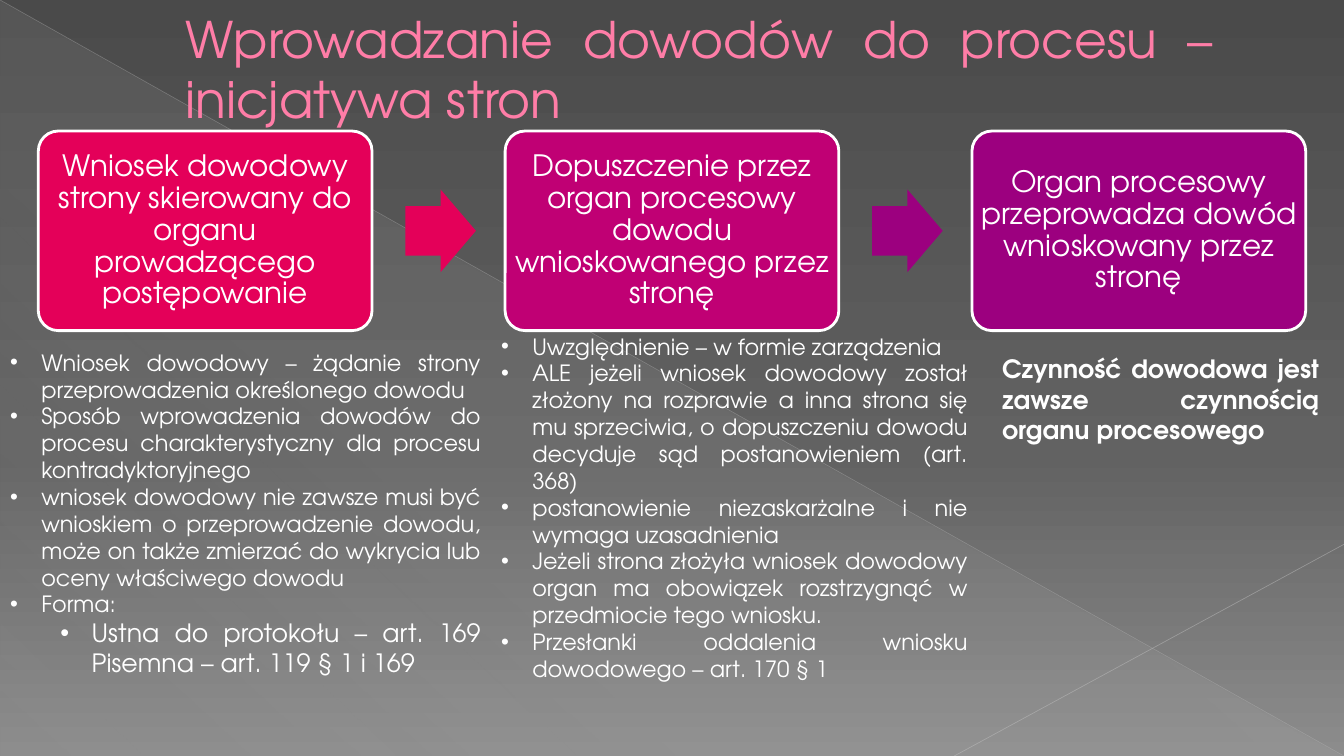
import dataclasses

import lxml.etree
import pptx
import pptx.dml.color
import pptx.enum.shapes
import pptx.enum.text
import pptx.oxml.ns
import pptx.util

Inches = pptx.util.Inches
Shape = pptx.enum.shapes.MSO_SHAPE
Align = pptx.enum.text.PP_ALIGN
Anchor = pptx.enum.text.MSO_ANCHOR
qn = pptx.oxml.ns.qn


@dataclasses.dataclass(frozen=True)
class Theme:
    """Colours, font and type sizes of the slide."""
    font: str = "TeX Gyre Adventor"
    title: str = "FF7DA7"
    text: str = "FFFFFF"
    steps: tuple = ("E40059", "C00074", "9C007F")
    arrows: tuple = ("E40059", "9C007F")
    background: tuple = ((0, "4A4A4A", 100), (60, "626262", 100), (100, "8C8C8C", 100))
    triangle: tuple = ((0, "D2D2D2", 10), (70, "D2D2D2", 8), (100, "D2D2D2", 1))
    title_size: int = 36
    step_size: int = 21
    list_size: int = 16
    large_size: int = 18


THEME = Theme()
WIDTH, HEIGHT = 13.33, 7.5
STEP_LEFT, STEP_PITCH, STEP_WIDTH = 0.38, 4.63, 3.31
STEP_TOP, STEP_HEIGHT = 1.3, 1.98
ARROW_GAP, ARROW_WIDTH, ARROW_HEIGHT = 0.33, 0.7, 0.82

TITLE = "Wprowadzanie dowodów do procesu – inicjatywa stron"
STEPS = (
    "Wniosek dowodowy strony skierowany do organu prowadzącego postępowanie",
    "Dopuszczenie przez organ procesowy dowodu wnioskowanego przez stronę",
    "Organ procesowy przeprowadza dowód wnioskowany przez stronę",
)
REQUEST = (
    (0, "Wniosek dowodowy – żądanie strony przeprowadzenia określonego dowodu"),
    (0, "Sposób wprowadzenia dowodów do procesu charakterystyczny dla procesu "
        "kontradyktoryjnego"),
    (0, "wniosek dowodowy nie zawsze musi być wnioskiem o przeprowadzenie dowodu, "
        "może on także zmierzać do wykrycia lub oceny właściwego dowodu"),
    (0, "Forma:"),
    (1, "Ustna do protokołu – art. 169 Pisemna – art. 119 § 1 i 169"),
)
DECISION = (
    (0, "Uwzględnienie – w formie zarządzenia"),
    (0, "ALE jeżeli wniosek dowodowy został złożony na rozprawie a inna strona się mu "
        "sprzeciwia, o dopuszczeniu dowodu decyduje sąd postanowieniem (art. 368)"),
    (0, "postanowienie niezaskarżalne i nie wymaga uzasadnienia"),
    (0, "Jeżeli strona złożyła wniosek dowodowy organ ma obowiązek rozstrzygnąć "
        "w przedmiocie tego wniosku."),
    (0, "Przesłanki oddalenia wniosku dowodowego – art. 170 § 1"),
)
CONCLUSION = "Czynność dowodowa jest zawsze czynnością organu procesowego"


def apply(target, values):
    """Set every attribute named in a dict of format values."""
    for name, value in values.items():
        setattr(target, name, value)


def rgb(code):
    """Turn a hex code into a colour."""
    return pptx.dml.color.RGBColor.from_string(code)


def place(shape, box):
    """Move a shape into a box given in inches."""
    apply(shape, dict(zip(("left", "top", "width", "height"), map(Inches, box))))


def write(paragraph, text, size, color=THEME.text, bold=False, **values):
    """Write one formatted run and set the paragraph's format."""
    run = paragraph.add_run()
    run.text = text
    apply(run.font, {"name": THEME.font, "size": pptx.util.Pt(size), "bold": bold})
    run.font.color.rgb = rgb(color)
    apply(paragraph, values)


def set_gradient(properties, stops, angle):
    """Replace the solid fill of a properties element by a linear gradient."""
    gradient = lxml.etree.Element(qn("a:gradFill"), rotWithShape="1")
    stop_list = lxml.etree.SubElement(gradient, qn("a:gsLst"))
    for position, code, opacity in stops:
        stop = lxml.etree.SubElement(stop_list, qn("a:gs"), pos=str(position * 1000))
        color = lxml.etree.SubElement(stop, qn("a:srgbClr"), val=code)
        lxml.etree.SubElement(color, qn("a:alpha"), val=str(opacity * 1000))
    lxml.etree.SubElement(gradient, qn("a:lin"), ang=str(angle * 60000), scaled="0")
    properties.replace(properties.find(qn("a:solidFill")), gradient)


def add_block(slide, kind, box, color, adjustments=()):
    """Add a flat filled preset shape."""
    shape = slide.shapes.add_shape(kind, *map(Inches, box))
    shape.shadow.inherit = False
    shape.fill.solid()
    shape.fill.fore_color.rgb = rgb(color)
    shape.line.fill.background()
    for index, value in enumerate(adjustments):
        shape.adjustments[index] = value
    return shape


def add_hairline(slide, start, end, color, width, opacity):
    """Add a thin translucent line."""
    line = slide.shapes.add_connector(
        pptx.enum.shapes.MSO_CONNECTOR.STRAIGHT, *map(Inches, start + end))
    line.line.width = pptx.util.Pt(width)
    line.line.color.rgb = rgb(color)
    properties = line.element.spPr
    tint = properties.find(".//" + qn("a:srgbClr"))
    lxml.etree.SubElement(tint, qn("a:alpha"), val=str(opacity * 1000))
    lxml.etree.SubElement(properties, qn("a:effectLst"))
    return line


def add_backdrop(slide, width, height):
    """Paint the background and send its decoration behind the text."""
    slide.background.fill.solid()
    set_gradient(slide.element.find(".//" + qn("p:bgPr")), THEME.background, 90)
    triangle = add_block(slide, Shape.RIGHT_TRIANGLE, (0, 0, width, height), "D2D2D2")
    set_gradient(triangle.element.spPr, THEME.triangle, 133)
    diagonal = add_hairline(slide, (0, 0), (width, height), "BFBFBF", 0.39, 35)
    corner = add_hairline(slide, (width, height * 0.72), (width * 0.71, height),
                          "C6C6C6", 0.47, 45)
    for index, shape in enumerate((triangle, diagonal, corner), start=2):
        slide.shapes.element.insert(index, shape.element)


def fill_title(shape, box, text):
    """Place and write the title."""
    place(shape, box)
    apply(shape.text_frame, {"word_wrap": True, "vertical_anchor": Anchor.MIDDLE,
                             "auto_size": pptx.enum.text.MSO_AUTO_SIZE.NONE})
    paragraph = shape.text_frame.paragraphs[0]
    write(paragraph, text, THEME.title_size, THEME.title, alignment=Align.JUSTIFY)
    paragraph._p.get_or_add_pPr().set("marL", str(Inches(0.53)))


def fill_list(shape, box, items):
    """Place a body placeholder and write its bulleted items."""
    place(shape, box)
    frame = shape.text_frame
    apply(frame, {"word_wrap": True, "vertical_anchor": Anchor.TOP,
                  "auto_size": pptx.enum.text.MSO_AUTO_SIZE.NONE})
    for index, (level, text) in enumerate(items):
        paragraph = frame.add_paragraph() if index else frame.paragraphs[0]
        write(paragraph, text, THEME.large_size if level else THEME.list_size,
              level=level, alignment=Align.JUSTIFY, space_before=pptx.util.Pt(0))
        properties = paragraph._p.get_or_add_pPr()
        properties.set("marL", str(Inches(0.31 + 0.5 * level)))
        properties.set("indent", str(Inches(-0.31)))
        lxml.etree.SubElement(properties, qn("a:buFont"), typeface="Arial")
        lxml.etree.SubElement(properties, qn("a:buChar"), char="•")


def add_step(slide, box, text, color):
    """Add one rounded step of the process."""
    shape = add_block(slide, Shape.ROUNDED_RECTANGLE, box, color, (0.1,))
    shape.line.color.rgb = rgb(THEME.text)
    shape.line.width = pptx.util.Pt(2)
    margins = dict.fromkeys(("margin_left", "margin_right", "margin_top",
                             "margin_bottom"), Inches(0.03))
    apply(shape.text_frame,
          {"word_wrap": True, "vertical_anchor": Anchor.MIDDLE, **margins})
    write(shape.text_frame.paragraphs[0], text, THEME.step_size,
          alignment=Align.CENTER, line_spacing=0.9)


def add_process(slide, left, top):
    """Add the row of steps with an arrow in each gap."""
    for index, (text, color) in enumerate(zip(STEPS, THEME.steps)):
        add_step(slide, (left + index * STEP_PITCH, top, STEP_WIDTH, STEP_HEIGHT),
                 text, color)
    for index, color in enumerate(THEME.arrows):
        arrow_left = left + index * STEP_PITCH + STEP_WIDTH + ARROW_GAP
        arrow_top = top + (STEP_HEIGHT - ARROW_HEIGHT) / 2
        add_block(slide, Shape.RIGHT_ARROW,
                  (arrow_left, arrow_top, ARROW_WIDTH, ARROW_HEIGHT), color, (0.6, 0.5))


def add_conclusion(slide, box, text):
    """Add the bold closing remark."""
    frame = slide.shapes.add_textbox(*map(Inches, box)).text_frame
    frame.word_wrap = True
    write(frame.paragraphs[0], text, THEME.large_size, bold=True, alignment=Align.JUSTIFY)


def main():
    """Build and save the presentation."""
    presentation = pptx.Presentation()
    apply(presentation, {"slide_width": Inches(WIDTH), "slide_height": Inches(HEIGHT)})
    slide = presentation.slides.add_slide(presentation.slide_layouts[3])
    add_backdrop(slide, WIDTH, HEIGHT)
    fill_title(slide.shapes.title, (1.21, 0.08, 10.92, 1.2), TITLE)
    add_process(slide, STEP_LEFT, STEP_TOP)
    fill_list(slide.placeholders[1], (0, 3.41, 4.87, 3.4), REQUEST)
    fill_list(slide.placeholders[2], (4.87, 3.25, 4.83, 3.6), DECISION)
    add_conclusion(slide, (9.84, 3.46, 3.34, 1.01), CONCLUSION)
    presentation.save("out.pptx")


if __name__ == "__main__":
    main()
